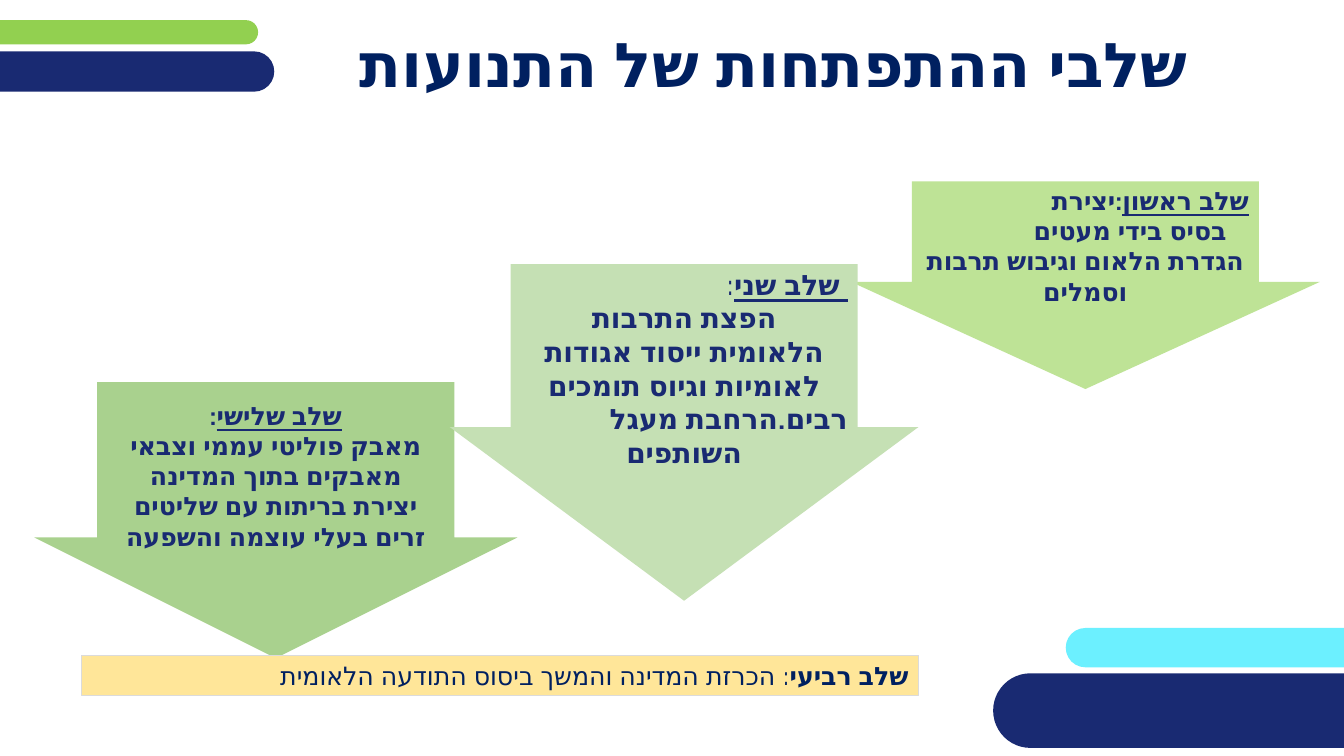
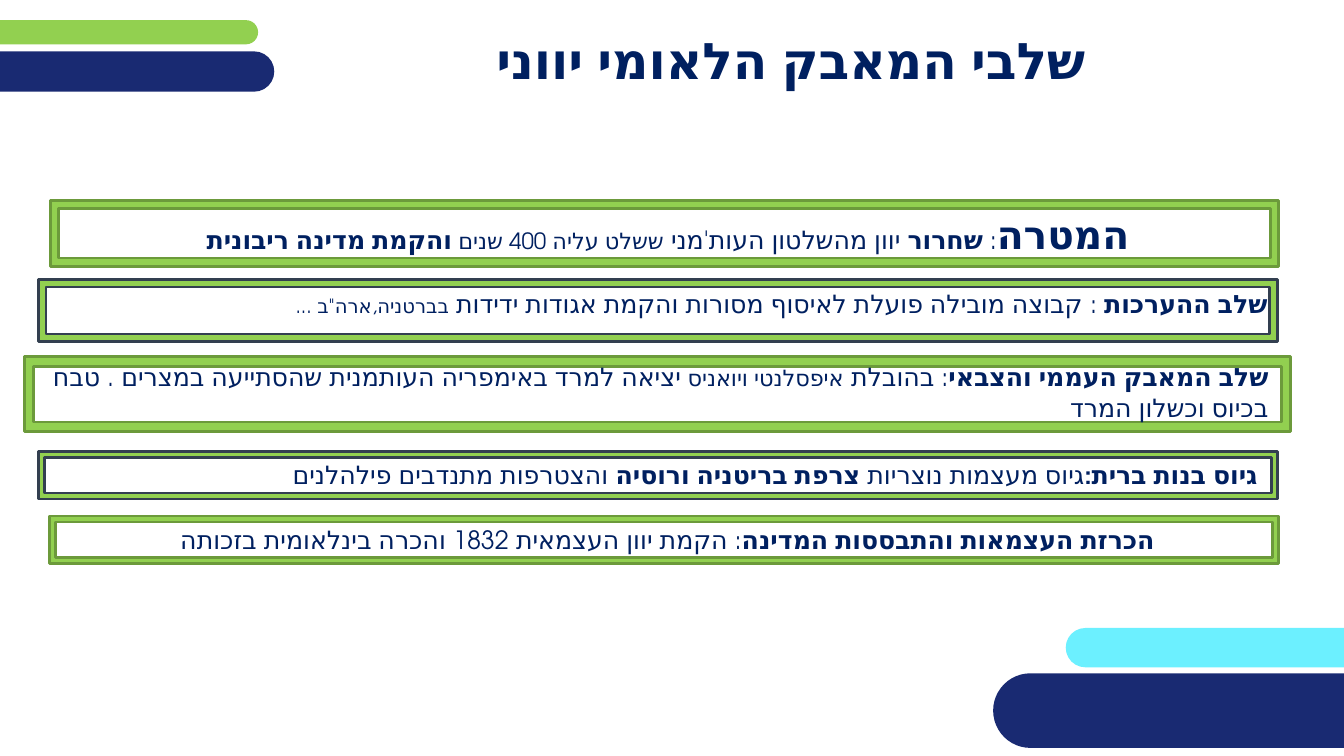
from dataclasses import dataclass
from typing import Optional

from lxml import etree
from pptx import Presentation
from pptx.dml.color import RGBColor
from pptx.enum.shapes import MSO_SHAPE
from pptx.enum.text import MSO_ANCHOR, PP_ALIGN
from pptx.oxml.ns import qn
from pptx.util import Inches, Pt

RECT, ROUND = MSO_SHAPE.RECTANGLE, MSO_SHAPE.ROUNDED_RECTANGLE
ARROW, FRAME = MSO_SHAPE.DOWN_ARROW, MSO_SHAPE.FRAME
TOP, MIDDLE = MSO_ANCHOR.TOP, MSO_ANCHOR.MIDDLE
CENTER, RIGHT = PP_ALIGN.CENTER, PP_ALIGN.RIGHT


@dataclass(frozen=True)
class Theme:
    font: str = "TeX Gyre Adventor"
    ink: str = "002060"
    navy: str = "192A72"
    cyan: str = "6CF0FF"
    green: str = "92D050"
    green_line: str = "6C9A3B"
    slate_line: str = "333F50"
    stage_1: str = "BEE396"
    stage_2: str = "C5E0B4"
    stage_3: str = "A9D18E"
    yellow: str = "FFE699"
    grey_line: str = "DBDBDB"
    title: int = 44
    title_small: int = 36
    goal: int = 28
    large: int = 20
    body: int = 18
    small: int = 16
    tiny: int = 14


T = Theme()


@dataclass(frozen=True)
class Box:
    left: float
    top: float
    width: float
    height: float

    def emu(self) -> tuple:
        return tuple(Inches(v) for v in (self.left, self.top, self.width, self.height))


@dataclass(frozen=True)
class Run:
    text: str
    bold: bool = False
    size: int = T.body
    underline: bool = False


@dataclass(frozen=True)
class Para:
    runs: tuple
    align: PP_ALIGN = CENTER
    indent: float = 0
    tab: Optional[float] = None
    after: int = 0


@dataclass(frozen=True)
class Band:
    box: Box
    color: str


@dataclass(frozen=True)
class Stage:
    box: Box
    color: str
    head: float
    paras: tuple


@dataclass(frozen=True)
class Bar:
    box: Box
    line: str
    paras: tuple = ()


BANDS = (
    Band(Box(10.57, 6.23, 5.21, 0.39), T.cyan),
    Band(Box(-0.28, 0.2, 2.84, 0.24), T.green),
    Band(Box(-0.53, 0.51, 3.25, 0.4), T.navy),
    Band(Box(9.85, 6.68, 4.11, 0.74), T.navy),
)

STAGES = (
    Stage(Box(0.34, 3.79, 4.79, 2.74), T.stage_3, 0.437, (
        Para((Run("שלב שלישי", True, underline=True), Run(":", True))),
        Para((Run("מאבק פוליטי עממי וצבאי מאבקים בתוך המדינה", True),)),
        Para((Run("יצירת בריתות עם שליטים זרים בעלי עוצמה והשפעה", True),)),
    )),
    Stage(Box(8.44, 1.8, 4.65, 2.06), T.stage_1, 0.516, (
        Para((Run("שלב ראשון", True, underline=True), Run(":\tיצירת", True)),
             RIGHT, tab=2.5),
        Para((Run("בסיס בידי מעטים", True),), RIGHT, indent=0.22),
        Para((Run("הגדרת הלאום וגיבוש תרבות וסמלים", True),)),
    )),
    Stage(Box(4.46, 2.62, 4.65, 3.34), T.stage_2, 0.516, (
        Para((Run(" שלב שני", True, T.large, True), Run(":", size=T.large)), RIGHT),
        Para((Run("הפצת התרבות", True, T.large),)),
        Para((Run("הלאומית ייסוד אגודות לאומיות וגיוס תומכים", True, T.large),)),
        Para((Run("רבים.\tהרחבת מעגל", True, T.large),), RIGHT, tab=1.37),
        Para((Run("השותפים", True, T.large),)),
    )),
)

FOURTH_STAGE = Para((
    Run("שלב רביעי", True),
    Run(": הכרזת המדינה והמשך ביסוס התודעה הלאומית "),
), RIGHT)

BARS = (
    Bar(Box(0.5, 1.99, 12.18, 0.65), T.green_line, (Para((
        Run("המטרה", True, T.goal),
        Run(": "),
        Run("שחרור", True),
        Run(" יוון מהשלטון העות'מני "),
        Run("ששלט עליה 400 שנים ", size=T.small),
        Run("והקמת מדינה ריבונית ", True),
    )),)),
    Bar(Box(0.49, 5.12, 12.19, 0.47), T.green_line, (Para((
        Run("הכרזת העצמאות והתבססות המדינה", True),
        Run(": הקמת יוון העצמאית 1832 והכרה בינלאומית בזכותה "),
    )),)),
    Bar(Box(0.24, 3.54, 12.56, 0.74), T.green_line),
    Bar(Box(0.38, 4.48, 12.29, 0.47), T.slate_line),
    Bar(Box(0.38, 2.77, 12.29, 0.62), T.slate_line),
)

BAR_TEXTS = (
    (Box(0.38, 3.54, 12.41, 0.66), (
        Run("שלב המאבק העממי והצבאי", True),
        Run(": בהובלת "),
        Run("איפסלנטי ויואניס ", size=T.small),
        Run("יציאה למרד באימפריה העותמנית שהסתייעה במצרים . טבח בכיוס וכשלון המרד "),
    )),
    (Box(0.38, 2.81, 12.47, 0.66), (
        Run(" "),
        Run("שלב ההערכות ", True),
        Run(": קבוצה מובילה פועלת לאיסוף מסורות והקמת אגודות ידידות "),
        Run('בברטניה,ארה"ב ... ', size=T.tiny),
    )),
    (Box(0.24, 4.51, 12.44, 0.39), (
        Run("גיוס בנות ברית:", True),
        Run("גיוס מעצמות נוצריות "),
        Run("צרפת בריטניה ורוסיה ", True),
        Run("והצטרפות מתנדבים פילהלנים"),
    )),
)


def write(tf, paras: tuple, color: str, anchor=MIDDLE) -> None:
    """Fill a text frame with right-to-left paragraphs."""
    tf.word_wrap = True
    tf.vertical_anchor = anchor
    for i, para in enumerate(paras):
        p = tf.add_paragraph() if i else tf.paragraphs[0]
        p.alignment = para.align
        p.space_after = Pt(para.after)
        pPr = p._p.get_or_add_pPr()
        pPr.set("rtl", "1")
        pPr.set("marL", str(Inches(para.indent)))
        pPr.set("indent", "0")
        if para.tab is not None:
            tabs = etree.SubElement(pPr, qn("a:tabLst"))
            etree.SubElement(tabs, qn("a:tab"), pos=str(Inches(para.tab)), algn="l")
        for run in para.runs:
            r = p.add_run()
            r.text = run.text
            r.font.size = Pt(run.size)
            r.font.bold = run.bold
            r.font.underline = run.underline
            r.font.color.rgb = RGBColor.from_string(color)
            r.font.name = T.font
            rPr = r._r.get_or_add_rPr()
            rPr.set("lang", "he-IL")
            etree.SubElement(rPr, qn("a:cs"), typeface=T.font)


def add_shape(s, kind, box: Box, fill: str, line: Optional[str] = None,
              width: float = 0, adjust: tuple = ()):
    sp = s.shapes.add_shape(kind, *box.emu())
    sp.shadow.inherit = False
    sp.fill.solid()
    sp.fill.fore_color.rgb = RGBColor.from_string(fill)
    if line:
        sp.line.color.rgb = RGBColor.from_string(line)
        sp.line.width = Pt(width)
    else:
        sp.line.fill.background()
    for i, value in enumerate(adjust):
        sp.adjustments[i] = value
    return sp


def add_text(s, box: Box, para: Para, anchor=TOP) -> None:
    write(s.shapes.add_textbox(*box.emu()).text_frame, (para,), T.ink, anchor)


def new_slide(prs, title: str, box: Box, size: int):
    """Add a blank slide with the shared corner bands and a title."""
    s = prs.slides.add_slide(prs.slide_layouts[6])
    for band in BANDS:
        add_shape(s, ROUND, band.box, band.color, adjust=(0.5,))
    add_text(s, box, Para((Run(title, True, size),)), MIDDLE)
    return s


def movement_stages(prs) -> None:
    s = new_slide(prs, "שלבי ההתפתחות של התנועות", Box(2.85, 0.23, 9.66, 0.79), T.title)
    for stage in STAGES:
        sp = add_shape(s, ARROW, stage.box, stage.color, adjust=(0.74, stage.head))
        write(sp.text_frame, stage.paras, T.navy)
    sp = add_shape(s, RECT, Box(0.81, 6.5, 8.3, 0.4), T.yellow, T.grey_line, 0.75)
    write(sp.text_frame, (FOURTH_STAGE,), T.ink, TOP)


def greek_struggle(prs) -> None:
    s = new_slide(prs, "שלבי המאבק הלאומי יווני ", Box(2.7, 0.19, 10.15, 0.79),
                  T.title_small)
    for bar in BARS:
        sp = add_shape(s, FRAME, bar.box, T.green, bar.line, 2)
        write(sp.text_frame, bar.paras, T.ink)
    for box, runs in BAR_TEXTS:
        add_text(s, box, Para(runs, RIGHT, indent=0.11, after=6))


def main() -> None:
    prs = Presentation()
    prs.slide_width, prs.slide_height = Inches(13.33), Inches(7.5)
    movement_stages(prs)
    greek_struggle(prs)
    prs.save("out.pptx")


if __name__ == "__main__":
    main()
